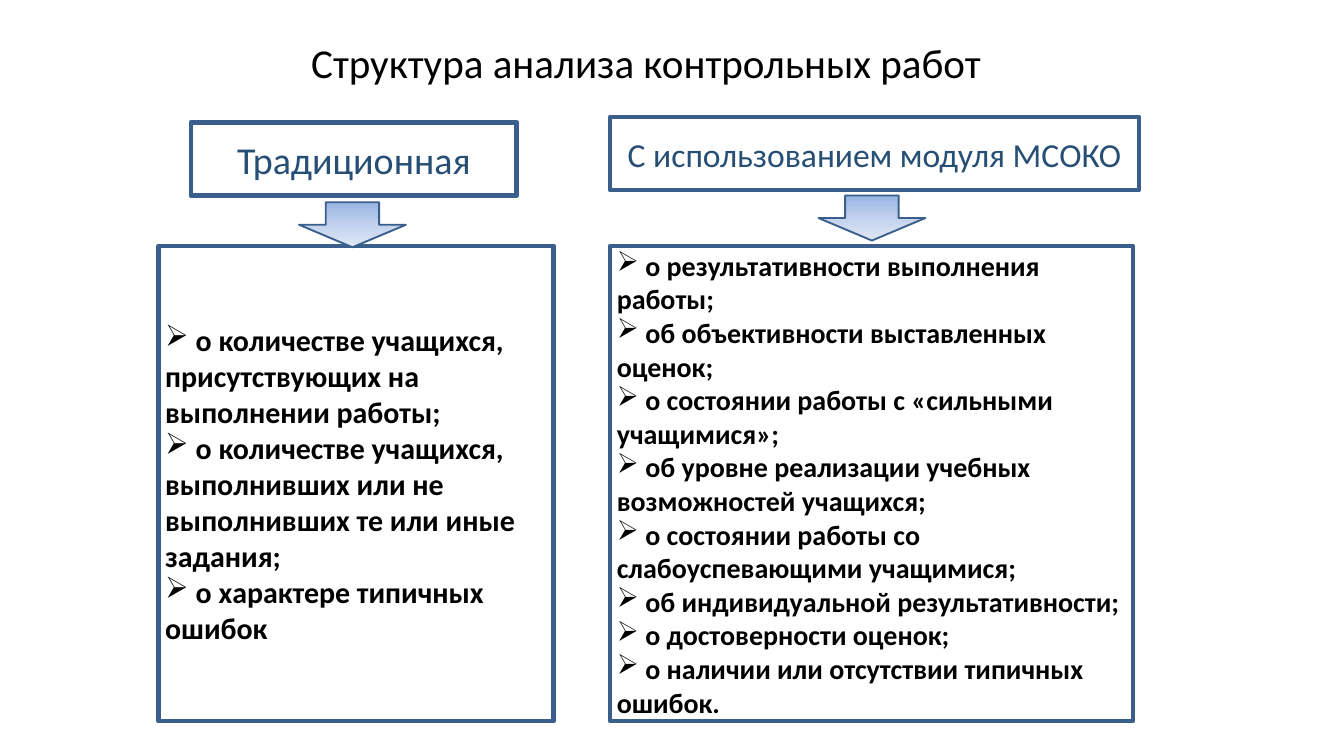
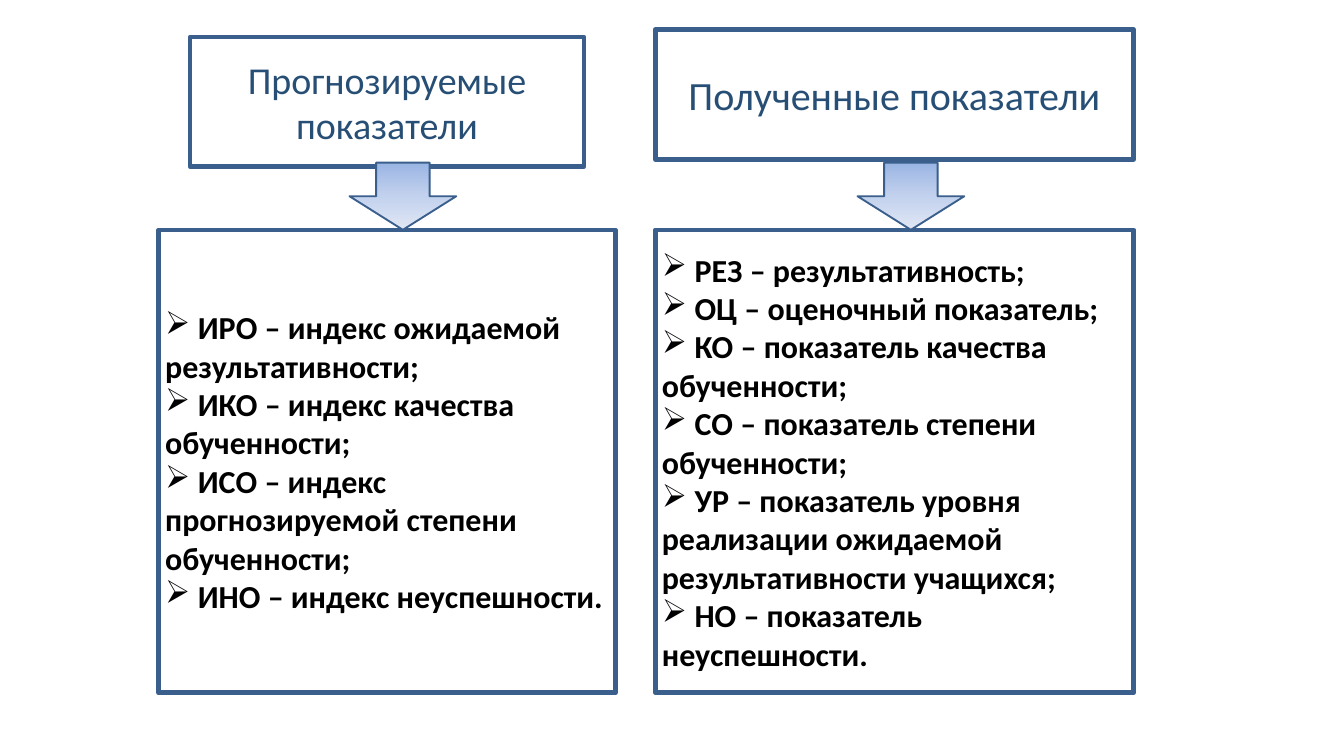
from copy import deepcopy
from dataclasses import dataclass

from lxml.etree import SubElement
from pptx import Presentation
from pptx.dml.color import RGBColor
from pptx.enum.shapes import MSO_SHAPE
from pptx.enum.text import MSO_ANCHOR, PP_ALIGN
from pptx.oxml.ns import qn
from pptx.shapes.autoshape import Shape
from pptx.slide import Slide
from pptx.util import Inches, Pt

# Shared look
FONT = "Calibri"
BLACK, BLUE, EDGE = "000000", "274E75", "3A5F8C"
FADE = [(0, "9AB5E4"), (0.5, "C2D1ED"), (1, "E1E8F5")]
ARROW_WIDTH = 1.59


@dataclass
class Box:
    left: float
    top: float
    width: float
    height: float


@dataclass
class Column:
    head: Box
    title: str
    title_size: float
    body: Box
    items: list[str]
    item_size: float
    arrow: Box


def color(code: str) -> RGBColor:
    return RGBColor.from_string(code)


def place(box: Box) -> list[Inches]:
    return [Inches(n) for n in (box.left, box.top, box.width, box.height)]


def write(shape: Shape, lines: list[str], *, size: float, ink: str = BLACK,
          bold: bool = False, align: PP_ALIGN = PP_ALIGN.CENTER,
          bullet: str = "") -> None:
    frame = shape.text_frame
    frame.word_wrap = True
    frame.vertical_anchor = MSO_ANCHOR.MIDDLE
    for i, line in enumerate(lines):
        para = frame.paragraphs[0] if i == 0 else frame.add_paragraph()
        para.alignment = align
        run = para.add_run()
        run.text = line
        font = run.font
        font.name, font.size, font.bold = FONT, Pt(size), bold
        font.color.rgb = color(ink)
        if bullet:
            props = para._p.get_or_add_pPr()
            props.set("marL", "0")
            props.set("indent", "0")
            SubElement(props, qn("a:buChar")).set("char", bullet)


def draw(slide: Slide, kind: MSO_SHAPE, box: Box, weight: float) -> Shape:
    shape = slide.shapes.add_shape(kind, *place(box))
    shape.shadow.inherit = False
    shape.fill.background()
    shape.line.color.rgb = color(EDGE)
    shape.line.width = Pt(weight)
    return shape


def add_arrow(slide: Slide, box: Box) -> None:
    shape = draw(slide, MSO_SHAPE.DOWN_ARROW, box, 2)
    fill = shape.fill
    fill.gradient()
    fill.gradient_angle = 270
    # The default gradient has two stops; add the middle one
    stops = shape._element.spPr.find(".//" + qn("a:gsLst"))
    stops.append(deepcopy(stops[0]))
    for stop, (spot, code) in zip(fill.gradient_stops, FADE):
        stop.position = spot
        stop.color.rgb = color(code)


def add_column(slide: Slide, col: Column) -> None:
    head = draw(slide, MSO_SHAPE.RECTANGLE, col.head, 5)
    write(head, [col.title], size=col.title_size, ink=BLUE)
    body = draw(slide, MSO_SHAPE.RECTANGLE, col.body, 5)
    write(body, [" " + item for item in col.items], size=col.item_size,
          bold=True, align=PP_ALIGN.LEFT, bullet="➢")
    add_arrow(slide, col.arrow)


def add_title(slide: Slide, text: str) -> None:
    box = slide.shapes.add_textbox(*place(Box(0.5, 0.3, 18.24, 1.25)))
    write(box, [text], size=44)


# Slide 1: kinds of analysis
ANALYSIS = [
    Column(
        Box(2.84, 1.82, 4.85, 1.09), "Традиционная", 40.7,
        Box(2.36, 3.66, 5.88, 7.07),
        ["о количестве учащихся, присутствующих на выполнении работы;",
         "о количестве учащихся, выполнивших или не выполнивших те или иные "
         "задания;",
         "о характере типичных ошибок"], 32.1,
        Box(4.45, 3.01, ARROW_WIDTH, 0.67)),
    Column(
        Box(9.08, 1.74, 7.87, 1.09), "С использованием модуля МСОКО", 36,
        Box(9.08, 3.66, 7.78, 7.07),
        ["о результативности выполнения работы;",
         "об объективности выставленных оценок;",
         "о состоянии работы с «сильными учащимися»;",
         "об уровне реализации учебных возможностей учащихся;",
         "о состоянии работы со слабоуспевающими учащимися;",
         "об индивидуальной результативности;",
         "о достоверности оценок;",
         "о наличии или отсутствии типичных ошибок."], 30,
        Box(12.18, 2.91, ARROW_WIDTH, 0.67)),
]

# Slide 2: indicators
MARKS = [
    Column(
        Box(2.83, 0.55, 5.86, 1.93), "Прогнозируемые показатели", 40.7,
        Box(2.36, 3.42, 6.8, 6.89),
        ["ИРО – индекс ожидаемой результативности;",
         "ИКО – индекс качества обученности;",
         "ИСО – индекс прогнозируемой степени обученности;",
         "ИНО – индекс неуспешности."], 34.3,
        Box(5.2, 2.42, ARROW_WIDTH, 1)),
    Column(
        Box(9.75, 0.44, 7.12, 1.93), "Полученные показатели", 42.9,
        Box(9.75, 3.42, 7.12, 6.89),
        ["РЕЗ – результативность;",
         "ОЦ – оценочный показатель;",
         "КО – показатель качества обученности;",
         "СО – показатель степени обученности;",
         "УР – показатель уровня реализации ожидаемой результативности "
         "учащихся;",
         "НО – показатель неуспешности."], 34.3,
        Box(12.76, 2.42, ARROW_WIDTH, 1)),
]


def main() -> None:
    deck = Presentation()
    deck.slide_width, deck.slide_height = Inches(20), Inches(11.25)
    for title, cols in [("Структура анализа контрольных работ", ANALYSIS),
                        ("", MARKS)]:
        slide = deck.slides.add_slide(deck.slide_layouts[6])
        if title:
            add_title(slide, title)
        for col in cols:
            add_column(slide, col)
    deck.save("out.pptx")


if __name__ == "__main__":
    main()
